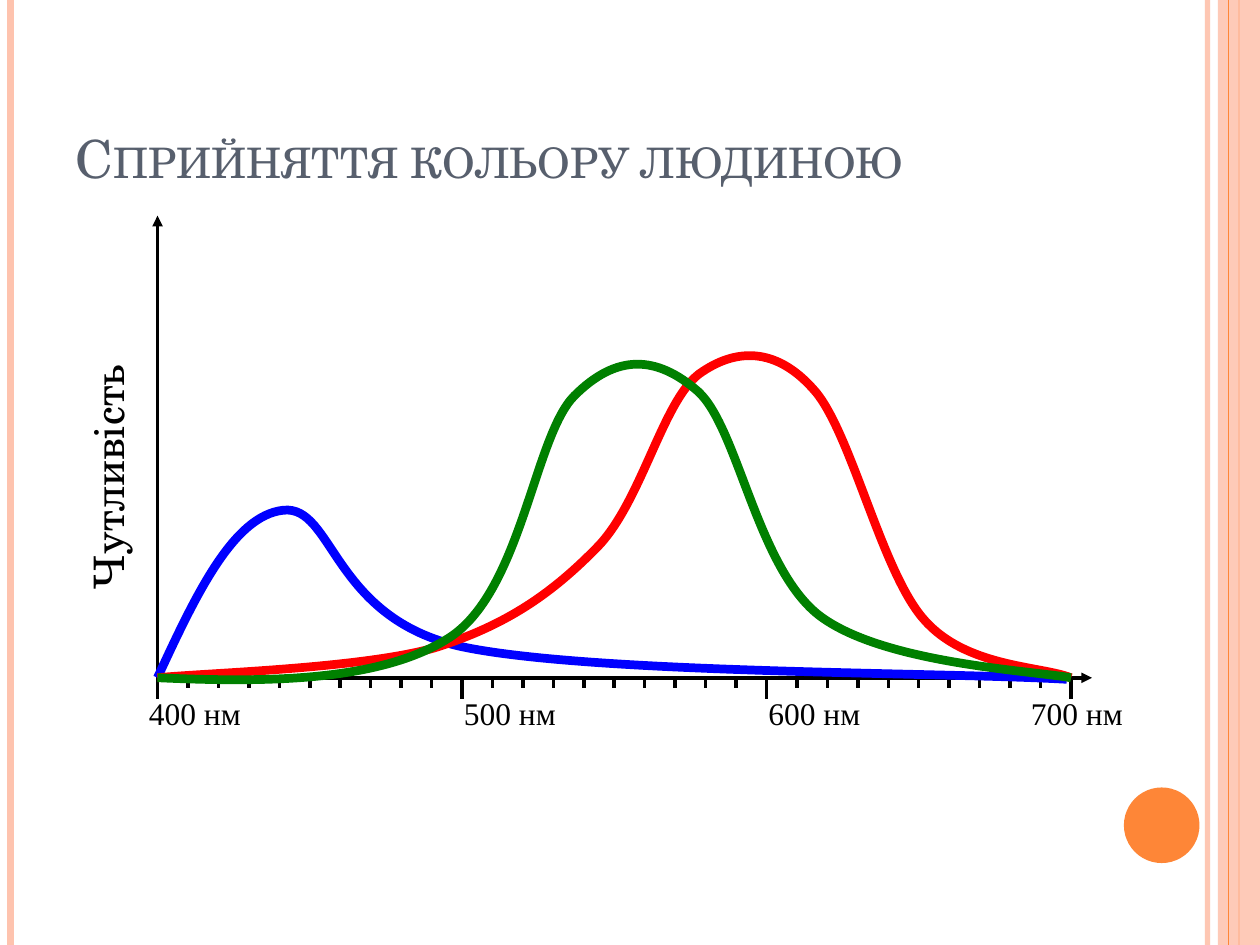
from pptx import Presentation
from pptx.dml.color import RGBColor
from pptx.enum.shapes import MSO_CONNECTOR, MSO_SHAPE
from pptx.enum.text import MSO_ANCHOR, PP_ALIGN
from pptx.oxml.ns import qn
from pptx.util import Inches, Pt
from lxml import etree

STRAIGHT = MSO_CONNECTOR.STRAIGHT
RECT, OVAL = MSO_SHAPE.RECTANGLE, MSO_SHAPE.OVAL
TOP, BOTTOM = MSO_ANCHOR.TOP, MSO_ANCHOR.BOTTOM
LEFT, CENTER = PP_ALIGN.LEFT, PP_ALIGN.CENTER

COLORS = {"peach": "FEC3AE", "orange": "FE8637", "slate": "575F6D", "black": "000000",
          "blue": "0000FF", "red": "FF0000", "green": "008000"}
SERIF, LABEL_FONT = "TeX Gyre Schola", "Times New Roman"

# The slide is a grid of 120 columns by 90 rows
COLUMNS, ROWS = 120, 90
AXIS_X, AXIS_Y = 15, 64.55
AXIS_TOP, AXIS_END = 20.55, 104
COLUMNS_PER_10_NM = 2.9


class SlideBuilder:
    def __init__(self, presentation):
        self.slide = presentation.slides.add_slide(presentation.slide_layouts[6])
        self.shapes = self.slide.shapes
        self.column = presentation.slide_width / COLUMNS
        self.row = presentation.slide_height / ROWS

    def grid(self, x, y):
        return round(x * self.column), round(y * self.row)

    def color(self, color_format, name, alpha=None):
        color_format.rgb = RGBColor.from_string(COLORS[name])
        if alpha:
            value = color_format._xFill.find(qn("a:srgbClr"))
            etree.SubElement(value, qn("a:alpha"), val=str(alpha * 1000))

    def stroke(self, shape, color, width, alpha=None):
        shape.line.fill.solid()
        self.color(shape.line.fill.fore_color, color, alpha)
        shape.line.width = Pt(width)

    def line(self, start, end, color="black", width=2, alpha=None, arrow=False, group=None):
        shapes = group.shapes if group else self.shapes
        connector = shapes.add_connector(STRAIGHT, *self.grid(*start), *self.grid(*end))
        self.stroke(connector, color, width, alpha)
        if arrow:
            etree.SubElement(connector.line._get_or_add_ln(), qn("a:tailEnd"), type="triangle")
        etree.SubElement(connector._element.spPr, qn("a:effectLst"))

    def tick(self, number, group=None):
        x = AXIS_X + number * COLUMNS_PER_10_NM
        length = 1 if number % 10 else 2
        self.line((x, AXIS_Y), (x, AXIS_Y + length), group=group)

    def block(self, kind, x, y, width, height, color, alpha=None):
        shape = self.shapes.add_shape(kind, *self.grid(x, y), *self.grid(width, height))
        shape.shadow.inherit = False
        shape.fill.solid()
        self.color(shape.fill.fore_color, color, alpha)
        shape.line.fill.background()

    def text(self, words, x, y, width, height, font, color="black",
             anchor=TOP, align=LEFT, rotation=0, small_caps=False):
        box = self.shapes.add_textbox(*self.grid(x, y), *self.grid(width, height))
        box.rotation = rotation
        frame = box.text_frame
        frame.word_wrap = True
        frame.vertical_anchor = anchor
        paragraph = frame.paragraphs[0]
        paragraph.alignment = align
        run = paragraph.add_run()
        run.text = words
        for attribute, value in font.items():
            setattr(run.font, attribute, value)
        self.color(run.font.color, color)
        if small_caps:
            run._r.get_or_add_rPr().set("cap", "small")

    def curve(self, color, points):
        outline = self.shapes.build_freeform(*self.grid(AXIS_X, AXIS_Y))
        outline.add_line_segments([self.grid(*point) for point in points], close=False)
        shape = outline.convert_to_shape()
        shape.shadow.inherit = False
        shape.fill.background()
        self.stroke(shape, color, 5)
        # Every three points become one cubic segment
        steps = list(shape._element.iter(qn("a:lnTo")))
        for first in range(0, len(steps), 3):
            segment = etree.Element(qn("a:cubicBezTo"))
            steps[first].addprevious(segment)
            for step in steps[first:first + 3]:
                segment.append(step[0])
                step.getparent().remove(step)


TITLE_STYLE = {"name": SERIF, "size": Pt(30)}
AXIS_STYLE = {"name": SERIF, "size": Pt(24)}
LABEL_STYLE = {"name": LABEL_FONT, "size": Pt(18)}

# Sensitivity curves: two control points and the end of each segment
SENSITIVITY = {
    "blue": [(18.6, 56.8), (22.2, 49.1), (27, 48.6),
             (31.8, 48.1), (31.6, 58.9), (44, 61.6),
             (56.4, 64.2), (89.6, 64), (101.6, 64.7)],
    "red": [(19.4, 64.1), (34.3, 63.7), (41.4, 61.7),
            (48.4, 59.5), (52.7, 56.4), (56.9, 52.1),
            (61.1, 47.8), (63.1, 38.2), (66.6, 35.6),
            (70.1, 33.1), (73.9, 33.1), (77.4, 37),
            (81, 40.8), (83.9, 54.4), (88, 59),
            (92, 63.6), (99.1, 63.4), (102, AXIS_Y)],
    "green": [(25.1, 65), (36.4, 65), (43, 60.6),
              (49.7, 56), (50.9, 41.5), (54.7, 37.7),
              (58.7, 33.7), (62.5, 33.8), (66.5, 37.3),
              (70.3, 40.8), (72.1, 54), (78, 58.6),
              (83.9, 63.1), (97.4, 63.8), (102, AXIS_Y)],
}


def main():
    presentation = Presentation()
    presentation.slide_width, presentation.slide_height = Inches(10), Inches(7.5)
    builder = SlideBuilder(presentation)

    # Side stripes and disc
    for x, color, width, alpha in [(115, "peach", 3, 93), (1, "peach", 4.5, None),
                                   (118, "orange", 1.5, None)]:
        builder.line((x, 0), (x, ROWS), color, width, alpha)
    builder.block(RECT, 116, 0, 4, ROWS, "peach", 87)
    builder.line((117, 0), (117, ROWS), "orange", 0.75)
    builder.block(OVAL, 107.04, 75, 7.2, 7.2, "orange")

    # Title and vertical axis title
    builder.text("Сприйняття кольору людиною", 6, 3.6, 98, 15, TITLE_STYLE, "slate",
                 anchor=BOTTOM, small_caps=True)
    builder.text("Чутливість", 34.3, -6.4, 49.7, 103.7, AXIS_STYLE,
                 align=CENTER, rotation=270)

    # Axes
    for end in [(AXIS_X, AXIS_TOP), (AXIS_END, AXIS_Y)]:
        builder.line((AXIS_X, AXIS_Y), end, arrow=True)

    # Ticks every 10 nm, grouped by hundreds with the long tick first
    builder.tick(0)
    for hundred in (10, 20, 30):
        scale = builder.shapes.add_group_shape()
        for number in (hundred, *range(hundred - 9, hundred)):
            builder.tick(number, scale)

    # Wavelength labels
    for wavelength, x in zip(range(400, 800, 100), (13, 43, 72, 97)):
        builder.text(f"{wavelength} нм", x, AXIS_Y + 1, 14.4, 5.2, LABEL_STYLE)

    # Sensitivity curves
    for color, points in SENSITIVITY.items():
        builder.curve(color, points)

    presentation.save("out.pptx")


if __name__ == "__main__":
    main()
